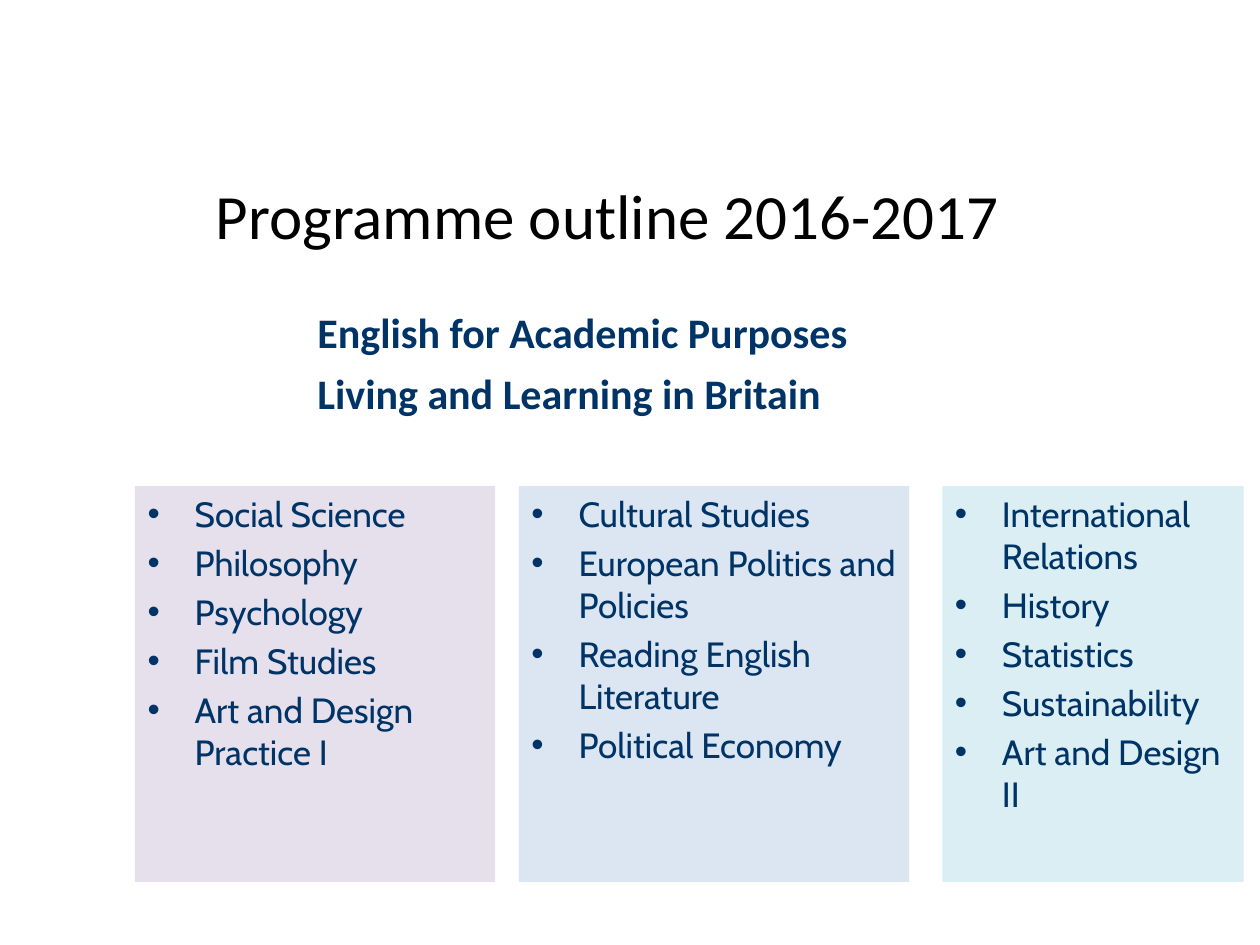
from pptx import Presentation
from pptx.dml.color import RGBColor
from pptx.enum.text import MSO_ANCHOR as Anchor, MSO_AUTO_SIZE as Auto, PP_ALIGN as Align
from pptx.oxml.ns import qn
from pptx.util import Cm, Pt
from lxml.etree import SubElement

NAVY = "003366"
INDENT = Cm(0.95)
TOP, HIGH = 9.8, 7.98


def color(code):
    return RGBColor.from_string(code)


def place(shape, box):
    shape.left, shape.top, shape.width, shape.height = map(Cm, box)
    frame = shape.text_frame
    frame.word_wrap = True
    frame.auto_size = Auto.NONE
    return frame


def style(par, font, size, code, bold=False):
    for run in par.runs:
        run.font.name = font
        run.font.size = Pt(size)
        run.font.bold = bold
        run.font.color.rgb = color(code)


def add_title(slide, box):
    frame = place(slide.shapes.title, box)
    frame.margin_left = Cm(1.55)
    frame.vertical_anchor = Anchor.MIDDLE
    frame.text = "Programme outline 2016-2017"
    par = frame.paragraphs[0]
    par.alignment = Align.LEFT
    style(par, "Calibri", 36, "000000")


def add_core(slide, box):
    """Name the modules that every student takes."""
    frame = place(slide.shapes.add_textbox(0, 0, 0, 0), box)
    frame.vertical_anchor = Anchor.MIDDLE
    frame.text = "English for Academic Purposes\nLiving and Learning in Britain"
    for par in frame.paragraphs:
        par.line_spacing = Pt(35)
        style(par, "Calibri", 24, NAVY, bold=True)


def add_list(shape, box, fill, items):
    frame = place(shape, box)
    shape.fill.solid()
    shape.fill.fore_color.rgb = color(fill)
    frame.vertical_anchor = Anchor.TOP
    frame.text = "\n".join(items)
    for i, par in enumerate(frame.paragraphs):
        props = par._p.get_or_add_pPr()
        props.set("marL", str(INDENT))
        props.set("indent", str(-INDENT))
        SubElement(props, qn("a:buFont")).set("typeface", "Arial")
        SubElement(props, qn("a:buChar")).set("char", "•")
        par.space_before = Pt(4 if i else 0)
        style(par, "Cabin", 20, NAVY)


def main():
    prs = Presentation()
    prs.slide_width, prs.slide_height = Cm(25.4), Cm(19.05)
    slide = prs.slides.add_slide(prs.slide_layouts[3])
    left, mid = slide.placeholders[1], slide.placeholders[2]
    add_title(slide, (2.8, 2.72, 20.2, 3.18))
    add_core(slide, (6.15, 5.57, 16.8, 3.25))
    right = slide.shapes.add_textbox(0, 0, 0, 0)
    lists = [
        (left, 2.72, 7.26, "E6E0EC",
         ["Social Science", "Philosophy", "Psychology", "Film Studies",
          "Art and Design Practice I"]),
        (mid, 10.46, 7.87, "DCE6F2",
         ["Cultural Studies", "European Politics and Policies",
          "Reading English Literature", "Political Economy"]),
        (right, 19, 6.07, "DBEEF4",
         ["International Relations", "History", "Statistics",
          "Sustainability", "Art and Design II"]),
    ]
    for shape, x, wide, fill, items in lists:
        add_list(shape, (x, TOP, wide, HIGH), fill, items)
    prs.save("out.pptx")


if __name__ == "__main__":
    main()
